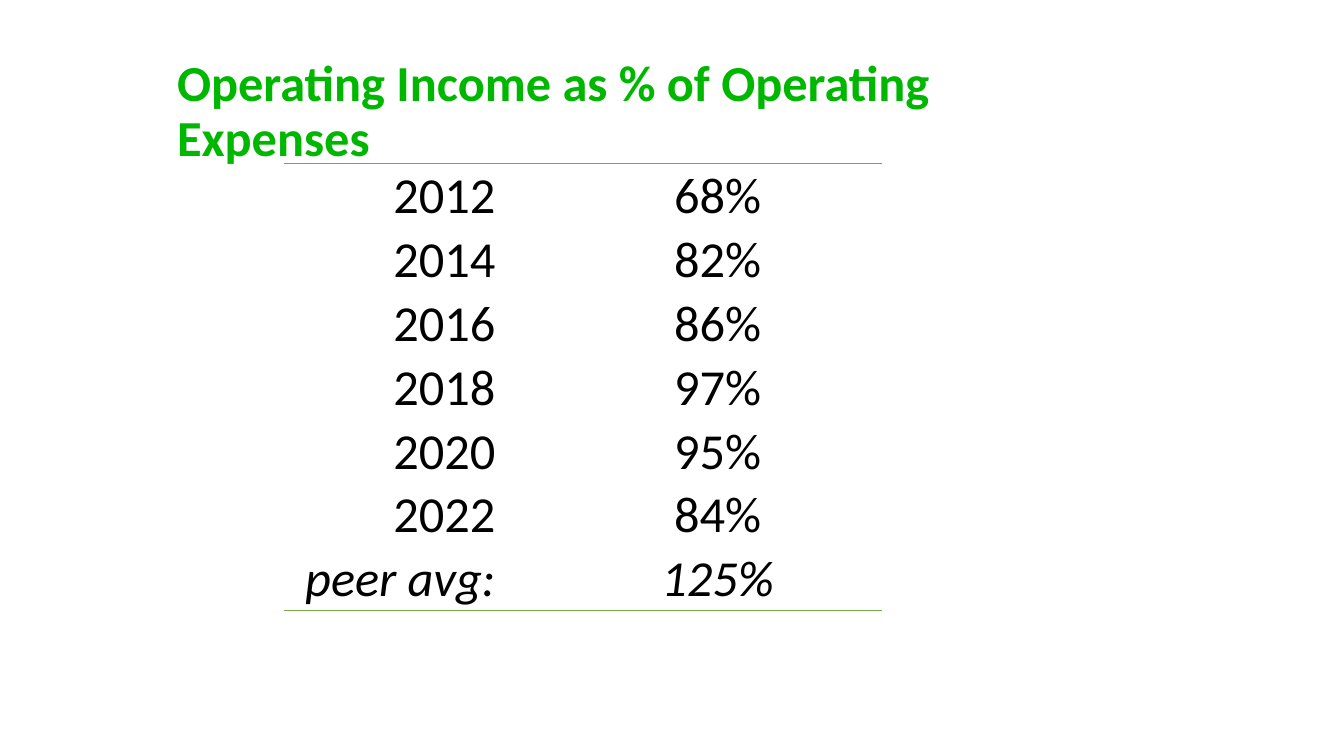
from pptx import Presentation, util as u
from pptx.dml.color import RGBColor
from pptx.enum import text
from pptx.oxml import parse_xml
from pptx.oxml.ns import nsdecls

SCALE = 9525
COLORS = {"title": "00B700", "body": "000000", "rule": "70AD47"}
NO_STYLE = "{2D5ABB26-0587-4C30-8999-92F81FD0307C}"
RATIOS = [
    ("2012", "68%"),
    ("2014", "82%"),
    ("2016", "86%"),
    ("2018", "97%"),
    ("2020", "95%"),
    ("2022", "84%"),
    ("peer avg:", "125%"),
]


def px(length):
    """Turn a length in px into EMU."""
    return u.Emu(length * SCALE)


def write(frame, words, color="body", align="LEFT", bold=False, italic=False, spacing=1.0):
    """Write one formatted paragraph into a text frame."""
    frame.word_wrap = True
    para = frame.paragraphs[0]
    para.alignment = getattr(text.PP_ALIGN, align)
    para.line_spacing = spacing
    span = para.add_run()
    span.text = words
    font = span.font
    font.name, font.size, font.bold, font.italic = "Calibri", u.Pt(36), bold, italic
    font.color.rgb = RGBColor.from_string(COLORS[color])


def add_rule(cell, side):
    """Draw a thin line along the top (T) or bottom (B) of a cell."""
    line = parse_xml(
        f'<a:ln{side} {nsdecls("a")} w="12700"><a:solidFill>'
        f'<a:srgbClr val="{COLORS["rule"]}"/></a:solidFill></a:ln{side}>'
    )
    cell._tc.get_or_add_tcPr().insert(0, line)


def place_title(page, left, top, width, height):
    """Place the heading in the title placeholder."""
    box = page.shapes.title
    box.left, box.top, box.width, box.height = map(px, (left, top, width, height))
    frame = box.text_frame
    frame.vertical_anchor = text.MSO_ANCHOR.MIDDLE
    frame.auto_size = text.MSO_AUTO_SIZE.NONE
    write(frame, "Operating Income as % of Operating Expenses",
          color="title", bold=True, spacing=0.9)


def place_ratios(page, left, top, widths, row_height):
    """Place the table of yearly ratios, ruled above and below."""
    box = page.shapes.add_table(
        len(RATIOS), len(widths), px(left), px(top),
        px(sum(widths)), px(row_height * len(RATIOS)),
    )
    table = box.table
    table.first_row = table.horz_banding = False
    table._tbl.tblPr[0].text = NO_STYLE
    for column, width in zip(table.columns, widths):
        column.width = px(width)
    last = len(RATIOS) - 1
    for row, ratio in enumerate(RATIOS):
        for col, (words, align, inset) in enumerate(zip(ratio, ("RIGHT", "CENTER"), (2, 55))):
            cell = table.cell(row, col)
            cell.fill.background()
            cell.vertical_anchor = text.MSO_ANCHOR.MIDDLE
            cell.margin_left, cell.margin_bottom = px(inset), 0
            cell.margin_top = cell.margin_right = px(2)
            write(cell.text_frame, words, align=align, italic=row == last)
            if row in (0, last):
                add_rule(cell, "B" if row else "T")


def main():
    """Build the deck and save it."""
    deck = Presentation()
    deck.slide_width, deck.slide_height = px(1280), px(720)
    page = deck.slides.add_slide(deck.slide_layouts.get_by_name("Title Only"))
    place_title(page, 159, 38, 895, 139)
    place_ratios(page, 270, 156, (204, 366), 60)
    deck.save("out.pptx")


if __name__ == "__main__":
    main()
